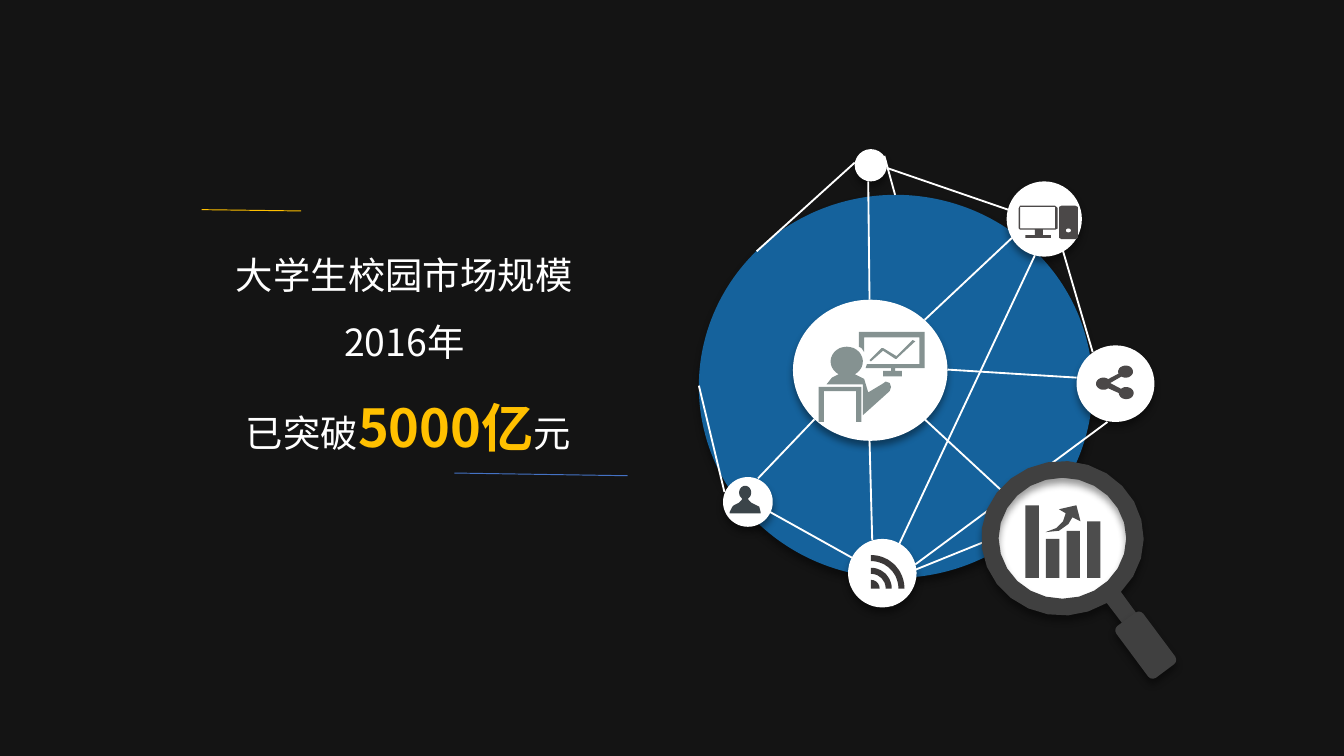
import math

import pptx
import pptx.dml.color
import pptx.enum.shapes
import pptx.enum.text
import pptx.oxml
import pptx.oxml.ns
import pptx.util
from lxml import etree

Inches = pptx.util.Inches
SHAPES = pptx.enum.shapes.MSO_SHAPE
FONT = "Noto Sans CJK SC"
WHITE, GOLD, BLUE, RING, ICON = "FFFFFF", "FFC000", "15629C", "404040", "4B4848"
SHADOW = (
    '<a:effectLst xmlns:a="http://schemas.openxmlformats.org/drawingml/2006/main">'
    '<a:outerShdw blurRad="50800" dist="38100" dir="5400000" algn="t" rotWithShape="0">'
    '<a:srgbClr val="000000"><a:alpha val="40000"/></a:srgbClr>'
    "</a:outerShdw></a:effectLst>"
)


def color(hex_value):
    return pptx.dml.color.RGBColor.from_string(hex_value)


def paint(shape, fill, shadow=False):
    shape.fill.solid()
    shape.fill.fore_color.rgb = color(fill)
    shape.line.fill.background()
    if shadow:
        shape._element.spPr.append(pptx.oxml.parse_xml(SHADOW))
    else:
        shape.shadow.inherit = False
    return shape


def add_preset(slide, kind, left, top, width, height, fill, shadow=False):
    shape = slide.shapes.add_shape(
        kind, Inches(left), Inches(top), Inches(width), Inches(height))
    return paint(shape, fill, shadow)


def add_line(slide, left, top, ends, stroke, weight):
    x1, y1, x2, y2 = ends
    line = slide.shapes.add_connector(
        pptx.enum.shapes.MSO_CONNECTOR.STRAIGHT,
        Inches(left + x1), Inches(top + y1), Inches(left + x2), Inches(top + y2))
    line.line.color.rgb = color(stroke)
    line.line.width = pptx.util.Pt(weight)
    etree.SubElement(line._element.spPr, pptx.oxml.ns.qn("a:effectLst"))


def add_outline(slide, left, top, contours, fill, shadow=False):
    scaled = [[(x * 10, y * 10) for x, y in contour] for contour in contours]
    builder = slide.shapes.build_freeform(*scaled[0][0], scale=Inches(1) / 1000)
    for number, contour in enumerate(scaled):
        if number:
            builder.move_to(*contour[0])
        builder.add_line_segments(contour[1:], close=True)
    return paint(builder.convert_to_shape(Inches(left), Inches(top)), fill, shadow)


def arc(cx, cy, rx, ry, start, end, steps=24):
    angles = [math.radians(start + (end - start) * i / steps) for i in range(steps + 1)]
    return [(cx + rx * math.cos(a), cy + ry * math.sin(a)) for a in angles]


def add_presenter(slide, left, top):
    chair = [(0, 41), (0, 67), (4, 67), (4, 44), (28, 44), (28, 67), (32, 67), (32, 41)]
    person = arc(21, 22, 12, 11, 120, 420) + [
        (34, 35), (37, 45), (47, 39), (50, 37), (53, 38), (54, 41), (53, 44),
        (33, 62), (33, 39), (6, 39), (10, 34)]
    trend = [(70, 6), (58, 18), (48, 12), (47, 12), (38, 21), (39, 22),
             (48, 14), (57, 20), (58, 20), (72, 7)]
    screen = [(79, 0), (30, 0), (30, 11), (32, 12), (34, 15), (34, 4), (75, 4),
              (75, 24), (36, 24), (35, 27), (54, 27), (54, 29), (48, 29), (48, 33),
              (62, 33), (62, 29), (57, 29), (57, 27), (79, 27)]
    add_outline(slide, left, top, [chair, person, trend, screen], "859291")


def add_desktop(slide, left, top):
    monitor = [(1, 0), (0, 2), (0, 17), (1, 18), (12, 18), (12, 22), (5, 22), (5, 24),
               (24, 24), (24, 22), (18, 22), (18, 18), (27, 18), (29, 17), (29, 2), (27, 0)]
    display = [(1, 1), (27, 1), (27, 17), (1, 17)]
    tower = [(2, 0), (12, 0), (14, 1), (14, 24), (12, 25), (2, 25), (0, 24), (0, 1)]
    add_outline(slide, left, top, [monitor, display], ICON)
    add_outline(slide, left + 0.3, top, [tower, arc(7, 18.5, 2, 1.5, 0, 360)], ICON)


def add_user(slide, left, top):
    bust = arc(11.5, 5.5, 4.5, 5, 120, 420) + [
        (14, 11), (16, 13), (20, 15), (22, 16), (23, 20), (23, 21),
        (0, 21), (0, 20), (2, 16), (3, 15), (7, 13), (9, 11)]
    add_outline(slide, left, top, [bust], "3B4449")


def add_share(slide, left, top):
    links = [(11, 13)]
    for cx, cy, start, end in ((22.5, 4.5, 125, -200), (6, 13.5, -50, -310),
                               (23, 20.5, 180, -135)):
        links += arc(cx, cy, 5.5, 4.5, start, end)
    add_outline(slide, left, top, [links], ICON)


def add_feed(slide, left, top):
    waves = [arc(0, 25, outer, outer, -90, 0) + arc(0, 25, inner, inner, 0, -90)
             for outer, inner in ((25, 20.5), (15.5, 11), (6.5, 0))]
    add_outline(slide, left, top, waves, "3B3838")


def add_network(slide, left, top):
    nodes = (
        (0, 0.34, 2.93, 2.85, BLUE),
        (2.29, 0.24, 0.56, 0.56, WHITE),
        (0.7, 1.12, 1.15, 1.05, WHITE),
        (1.16, 0, 0.24, 0.24, WHITE),
        (1.11, 2.9, 0.51, 0.51, WHITE),
        (0.18, 2.44, 0.37, 0.37, WHITE),
        (2.81, 1.46, 0.58, 0.57, WHITE),
    )
    for x, y, width, height, fill in nodes:
        add_preset(slide, SHAPES.OVAL, left + x, top + y, width, height, fill, True)
    links = (
        (1.26, 0.24, 1.27, 1.12), (2.33, 0.66, 1.68, 1.27), (2.81, 1.7, 1.85, 1.64),
        (1.29, 2.91, 1.27, 2.17), (0.44, 2.45, 0.86, 2.01), (3.04, 2.03, 1.61, 3.09),
        (2.93, 1.51, 2.71, 0.76), (2.3, 0.45, 1.4, 0.14), (2.5, 0.79, 1.49, 2.94),
        (1.14, 3.04, 0.53, 2.7), (0.43, 0.76, 1.16, 0.1), (2.93, 1.76, 3.38, 1.8),
        (1.46, 3.19, 1.44, 3.4), (2.5, 0.76, 2.81, 0.38), (0.43, 2.77, 0.29, 2.79),
        (0.19, 2.55, 0, 1.76), (1.46, 0.34, 1.38, 0.05), (2.5, 2.77, 1.68, 2.01),
        (2.5, 2.77, 1.46, 3.19),
    )
    for link in links:
        add_line(slide, left, top, link, WHITE, 1)
    for add_icon, x, y in ((add_user, 0.23, 2.5), (add_share, 2.95, 1.61),
                           (add_desktop, 2.38, 0.42), (add_feed, 1.28, 3.02),
                           (add_presenter, 0.89, 1.36)):
        add_icon(slide, left + x, top + y)


def add_magnifier(slide, left, top):
    add_preset(slide, SHAPES.OVAL, left + 0.1, top + 0.1, 1.01, 0.95, WHITE)
    frame = arc(62.5, 57.5, 60.5, 57.5, 44, -303) + [
        (127, 147), (131, 150), (136, 148), (139, 144), (137, 140)]
    opening = arc(62.5, 57.5, 47.5, 45, 0, 360)
    add_outline(slide, left, top, [frame, opening], RING, True)
    handle = add_preset(slide, SHAPES.ROUNDED_RECTANGLE,
                        left + 1.12, top + 1.13, 0.25, 0.48, RING, True)
    handle.rotation = 323.3
    for number, height in enumerate((0.54, 0.29, 0.35, 0.42)):
        add_preset(slide, SHAPES.RECTANGLE, left + 0.35 + 0.153 * number,
                   top + 0.87 - height, 0.1, height, "4D4D4D")
    arrow = [(0, 20), (8, 17), (13, 12), (15, 6), (10, 3), (23, 0),
             (26, 12), (20, 9), (17, 14), (10, 19)]
    add_outline(slide, left + 0.5, top + 0.33, [arrow], "4D4D4D")


def add_headline(slide, left, top):
    box = slide.shapes.add_textbox(
        Inches(left + 0.16), Inches(top + 0.11), Inches(2.76), Inches(1.79))
    frame = box.text_frame
    frame.word_wrap = False
    frame.auto_size = pptx.enum.text.MSO_AUTO_SIZE.SHAPE_TO_FIT_TEXT
    frame.margin_left = frame.margin_right = Inches(0.07)
    frame.margin_top = frame.margin_bottom = Inches(0.04)
    lines = (
        [("大学生校园市场规模 ", 20, WHITE, False)],
        [("2016年 ", 20, WHITE, False)],
        [("已突破", 20, WHITE, False), ("5000亿", 28, GOLD, True), ("元", 20, WHITE, False)],
    )
    for number, runs in enumerate(lines):
        paragraph = frame.add_paragraph() if number else frame.paragraphs[0]
        paragraph.alignment = pptx.enum.text.PP_ALIGN.CENTER
        paragraph.line_spacing = 1.5
        for text, size, fill, bold in runs:
            run = paragraph.add_run()
            run.text = text
            run.font.size = pptx.util.Pt(size)
            run.font.bold = bold
            run.font.color.rgb = color(fill)
            run.font.name = FONT
            etree.SubElement(run.font._element, pptx.oxml.ns.qn("a:ea"), typeface=FONT)
    add_line(slide, left, top, (0, 0, 0.74, 0.01), GOLD, 0.5)
    add_line(slide, left, top, (1.88, 1.96, 3.17, 1.98), "4472C4", 0.5)


def main():
    deck = pptx.Presentation()
    deck.slide_width = Inches(10)
    deck.slide_height = deck.slide_width * 9 // 16
    slide = deck.slides.add_slide(deck.slide_layouts[6])
    slide.background.fill.solid()
    slide.background.fill.fore_color.rgb = color("141414")
    add_headline(slide, 1.5, 1.56)
    add_network(slide, 5.2, 1.11)
    add_magnifier(slide, 7.28, 3.43)
    deck.save("out.pptx")


if __name__ == "__main__":
    main()
